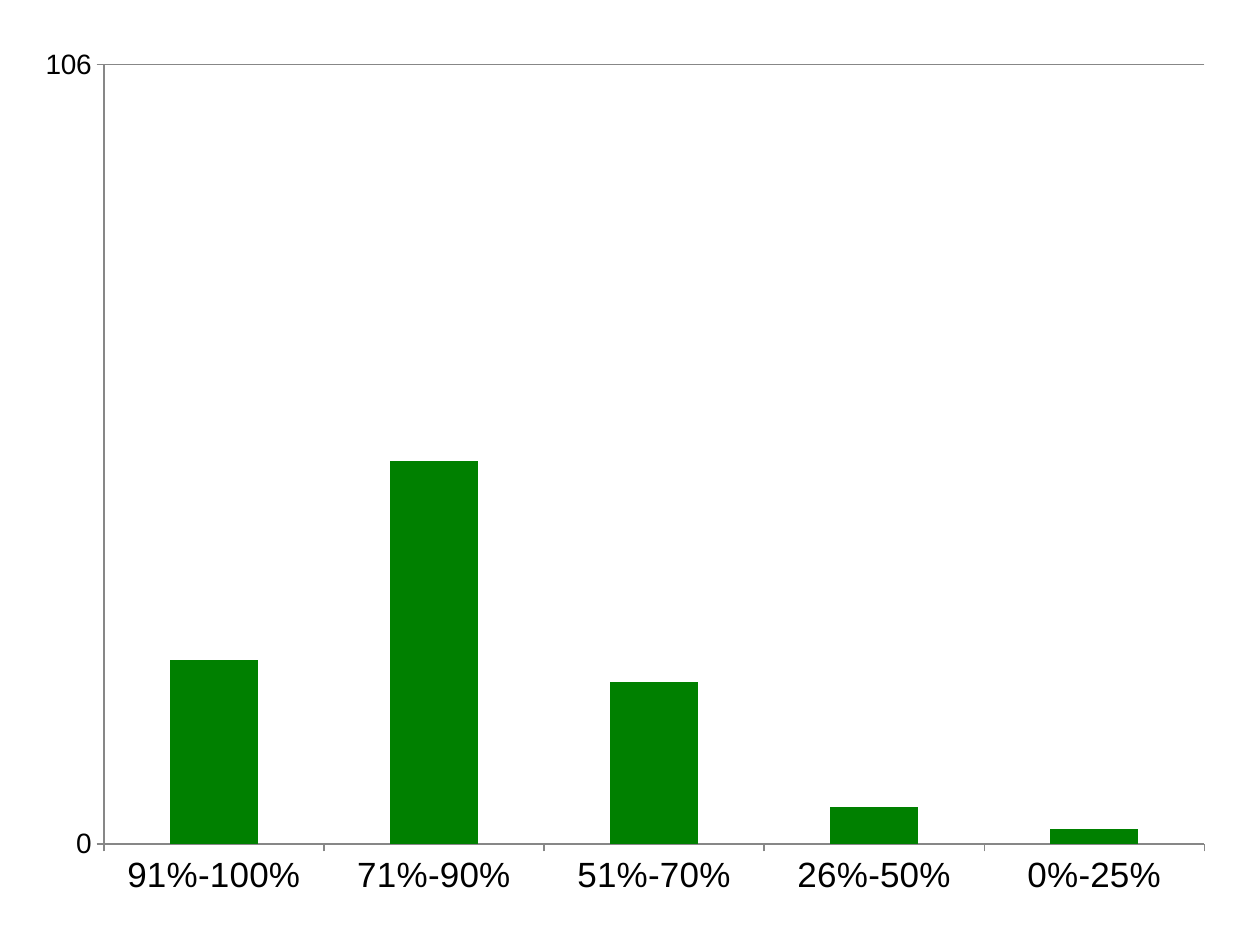
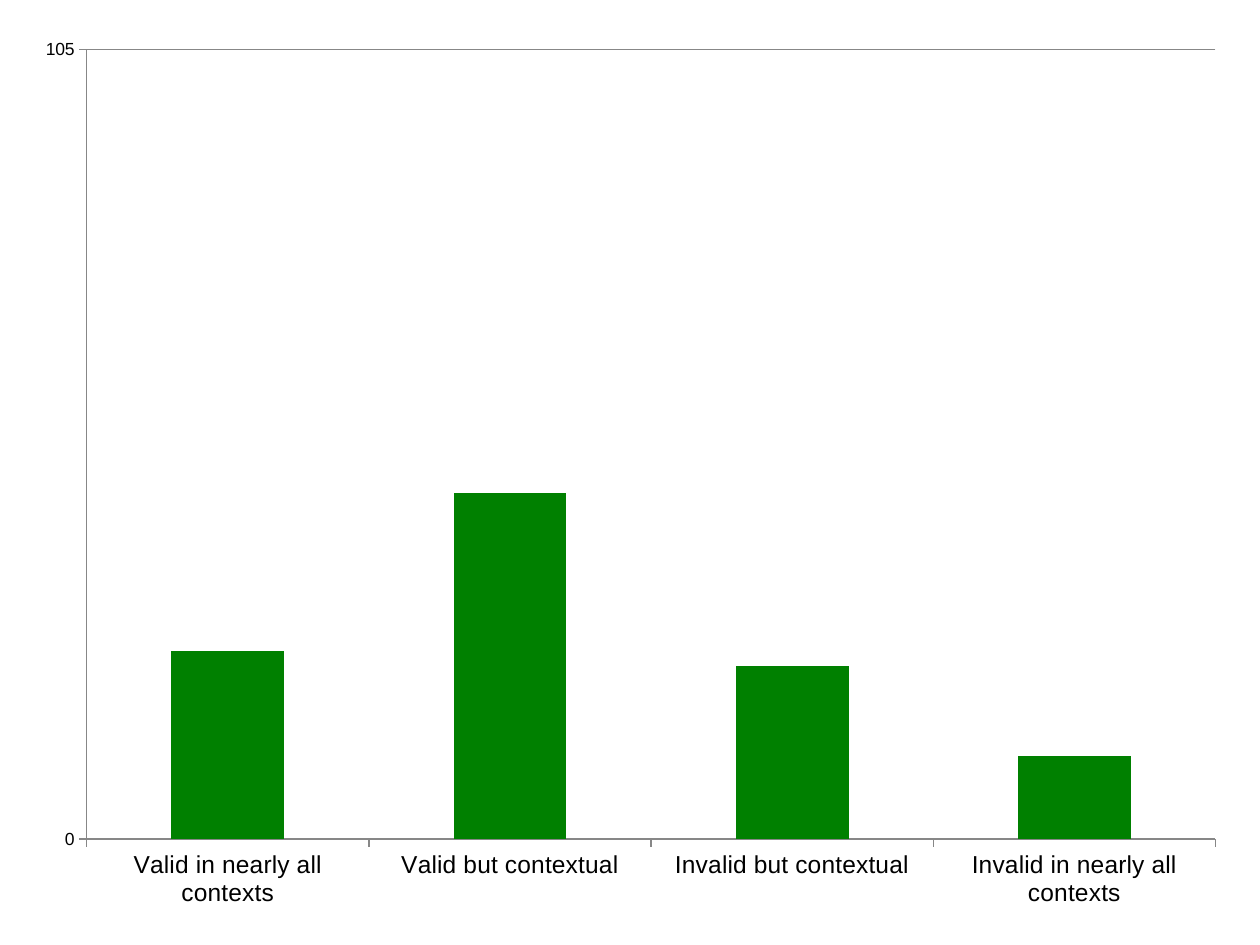
from pptx import Presentation
from pptx.chart.data import CategoryChartData
from pptx.dml.color import RGBColor
from pptx.enum.chart import XL_CHART_TYPE, XL_TICK_MARK
from pptx.util import Inches, Pt

GREEN = RGBColor(0x00, 0x80, 0x00)
GRAY = RGBColor(0x87, 0x87, 0x87)
BLACK = RGBColor(0x00, 0x00, 0x00)
WHITE = RGBColor(0xFF, 0xFF, 0xFF)
BLANK_LAYOUT = 6


class ChartDeck:
    """Holds the shared chart style and the current slide."""

    font_name = "Arial"
    base_size = 10

    def __init__(self):
        self.deck = Presentation()
        self.deck.slide_width = Inches(10)
        self.deck.slide_height = Inches(7.5)
        self.page = None

    def add_page(self):
        self.page = self.deck.slides.add_slide(self.deck.slide_layouts[BLANK_LAYOUT])
        self.page.background.fill.solid()
        self.page.background.fill.fore_color.rgb = WHITE

    def style_font(self, font, size):
        font.name = self.font_name
        font.size = Pt(size)
        font.color.rgb = BLACK

    def style_axis(self, axis, size):
        axis.major_tick_mark = XL_TICK_MARK.OUTSIDE
        axis.minor_tick_mark = XL_TICK_MARK.NONE
        axis.format.line.color.rgb = GRAY
        self.style_font(axis.tick_labels.font, size)

    def add_columns(self, area, counts, total, category_size, value_size):
        data = CategoryChartData()
        data.categories = list(counts)
        data.add_series("Series 1", list(counts.values()))
        frame = self.page.shapes.add_chart(
            XL_CHART_TYPE.COLUMN_CLUSTERED, *map(Inches, area), data)
        chart = frame.chart
        chart.has_title = False
        chart.has_legend = False
        self.style_font(chart.font, self.base_size)

        # Columns
        plot = chart.plots[0]
        plot.gap_width = 150
        plot.vary_by_categories = False
        fill = plot.series[0].format.fill
        fill.solid()
        fill.fore_color.rgb = GREEN

        # Axes: only zero and the total number of answers are marked
        self.style_axis(chart.category_axis, category_size)
        value_axis = chart.value_axis
        self.style_axis(value_axis, value_size)
        value_axis.minimum_scale = 0
        value_axis.maximum_scale = total
        value_axis.major_unit = total
        value_axis.has_major_gridlines = True
        value_axis.major_gridlines.format.line.color.rgb = GRAY


def main():
    charts = ChartDeck()

    # Percentage ranges
    charts.add_page()
    charts.add_columns(
        (0.17, 0.25, 9.58, 7),
        {"91%-100%": 25, "71%-90%": 52, "51%-70%": 22, "26%-50%": 5, "0%-25%": 2},
        total=106, category_size=20, value_size=16)

    # Validity by context
    charts.add_page()
    charts.add_columns(
        (0.17, 0.17, 9.67, 7.17),
        {"Valid in nearly all contexts": 25, "Valid but contextual": 46,
         "Invalid but contextual": 23, "Invalid in nearly all contexts": 11},
        total=105, category_size=14, value_size=charts.base_size)

    charts.deck.save("out.pptx")


if __name__ == "__main__":
    main()
